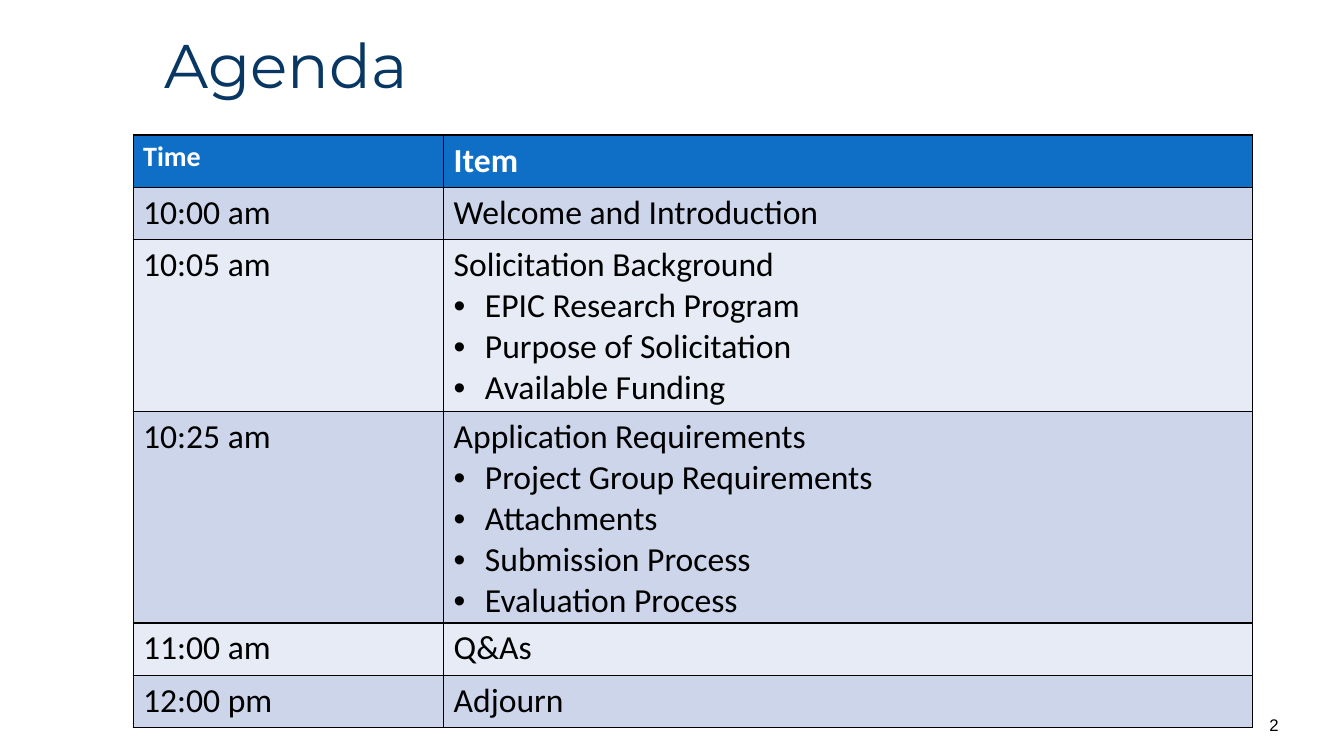
"""Build the agenda slide with its timetable."""
from pptx import Presentation
from pptx.dml.color import RGBColor
from pptx.enum.text import MSO_ANCHOR as Anchor, PP_ALIGN as Align
from pptx.oxml.ns import qn
from pptx.util import Inches, Pt
from lxml.etree import SubElement as Sub

HEAD = ("Time", "Item")
ITEMS = [
    ("10:00 am", "Welcome and Introduction", []),
    ("10:05 am", "Solicitation Background",
     ["EPIC Research Program", "Purpose of Solicitation", "Available Funding"]),
    ("10:25 am", "Application Requirements",
     ["Project Group Requirements", "Attachments",
      "Submission Process", "Evaluation Process"]),
    ("11:00 am", "Q&As", []),
    ("12:00 pm", "Adjourn", []),
]
WIDTHS = (3.08, 8.02)
LOW, TALL = 0.52, 1.66
BLUE, BANDS = "0F6FC6", ("CCD5EA", "E7EBF5")


def color(code):
    return RGBColor.from_string(code)


def style(para, face, size, code, bold=False):
    font = para.font
    font.name, font.size, font.bold = face, Pt(size), bold
    font.color.rgb = color(code)


def label(slide, text, box, face, size, code):
    frame = slide.shapes.add_textbox(*map(Inches, box)).text_frame
    frame.word_wrap = True
    frame.vertical_anchor = Anchor.MIDDLE
    para = frame.paragraphs[0]
    para.text = text
    style(para, face, size, code)
    return para


def bullet(para):
    props = para._p.get_or_add_pPr()
    props.set("marL", str(Inches(0.31)))
    props.set("indent", str(-Inches(0.31)))
    Sub(props, qn("a:buFont"), typeface="Arial")
    Sub(props, qn("a:buChar"), char="•")


def border(cell):
    props = cell._tc.get_or_add_tcPr()
    for side in ("lnL", "lnR", "lnT", "lnB"):
        line = Sub(props, qn(f"a:{side}"), w=str(Pt(1)))
        Sub(Sub(line, qn("a:solidFill")), qn("a:srgbClr"), val="000000")


def write(cell, lines, fill, size=24, ink="000000", bold=False):
    border(cell)
    cell.fill.solid()
    cell.fill.fore_color.rgb = color(fill)
    frame = cell.text_frame
    frame.text = "\n".join(lines)
    for spot, para in enumerate(frame.paragraphs):
        if spot:
            bullet(para)
        style(para, "Calibri", size, ink, bold)


def main():
    deck = Presentation()
    deck.slide_width, deck.slide_height = Inches(13.33), Inches(7.5)
    slide = deck.slides.add_slide(deck.slide_layouts[6])

    title = label(slide, "Agenda", (1.53, 0.11, 10.89, 1.14),
                  "Montserrat", 44, "083763")
    title.line_spacing = 0.9

    highs = [LOW] + [TALL if subs else LOW for _, _, subs in ITEMS]
    box = (1.32, 1.34, sum(WIDTHS), sum(highs))
    table = slide.shapes.add_table(
        len(highs), len(WIDTHS), *map(Inches, box)).table
    for col, wide in zip(table.columns, WIDTHS):
        col.width = Inches(wide)
    for row, high in zip(table.rows, highs):
        row.height = Inches(high)

    for col, (text, size) in enumerate(zip(HEAD, (20, 24))):
        write(table.cell(0, col), [text], BLUE, size, "FFFFFF", True)
    for row, (time, item, subs) in enumerate(ITEMS, 1):
        fill = BANDS[(row - 1) % 2]
        write(table.cell(row, 0), [time], fill)
        write(table.cell(row, 1), [item, *subs], fill)

    page = label(slide, "2", (10.81, 6.99, 1.97, 0.4), "Arial", 12, "000000")
    page.alignment = Align.RIGHT
    deck.save("out.pptx")


if __name__ == "__main__":
    main()
